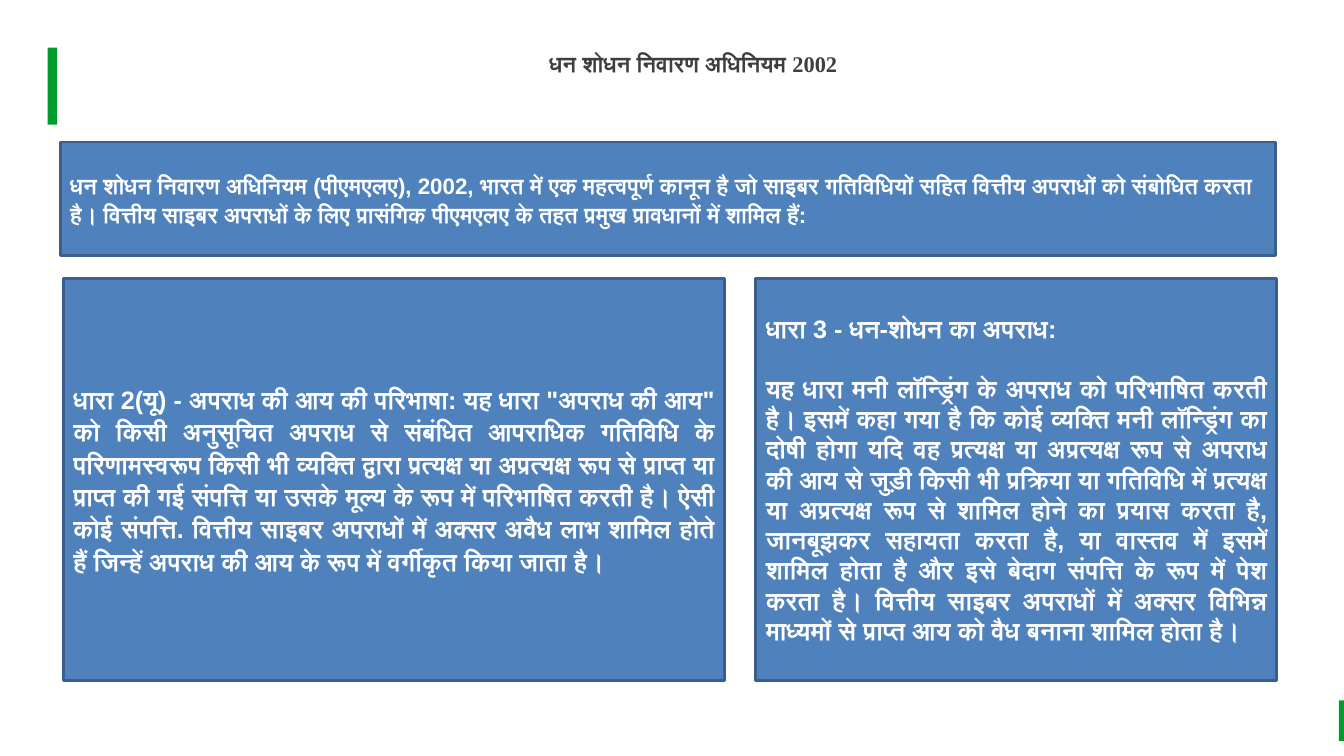
"""Build the slide on the money laundering prevention act of 2002."""
from dataclasses import dataclass

from pptx import Presentation
from pptx.dml.color import RGBColor
from pptx.enum.shapes import MSO_SHAPE
from pptx.enum.text import MSO_ANCHOR, MSO_AUTO_SIZE, PP_ALIGN
from pptx.shapes.autoshape import Shape
from pptx.slide import Slide
from pptx.text.text import _Paragraph
from pptx.util import Cm, Pt

COLOURS = {
    "accent": "029B2D",
    "panel": "4F81BD",
    "border": "3A5F8C",
    "heading": "3E3E3E",
    "panel_text": "FFFFFF",
}


@dataclass(frozen=True)
class Area:
    """A rectangle on the slide, in centimetres."""

    left: float
    top: float
    width: float
    height: float


@dataclass(frozen=True)
class Passage:
    """One paragraph of a panel."""

    wording: str
    align: PP_ALIGN = PP_ALIGN.JUSTIFY
    spacing: float = 1.0
    after: float = 0


@dataclass(frozen=True)
class Panel:
    """A filled box with its passages."""

    area: Area
    size: int
    passages: tuple[Passage, ...]


HEADING = "धन शोधन निवारण अधिनियम 2002"
HEADING_AREA = Area(1.52, 1.27, 31.9, 0.69)
ACCENTS = (Area(33.74, 17.65, 0.13, 1.02), Area(1.2, 1.2, 0.24, 1.94))
PANELS = (
    Panel(Area(1.52, 3.58, 30.63, 2.87), 16, (
        Passage(
            "धन शोधन निवारण अधिनियम (पीएमएलए), 2002, भारत में एक महत्वपूर्ण कानून है "
            "जो साइबर गतिविधियों सहित वित्तीय अपराधों को संबोधित करता है। वित्तीय साइबर "
            "अपराधों के लिए प्रासंगिक पीएमएलए के तहत प्रमुख प्रावधानों में शामिल हैं:",
            PP_ALIGN.LEFT, 1.07, 8),
    )),
    Panel(Area(1.6, 7.01, 16.66, 10.13), 18, (
        Passage(
            'धारा 2(यू) - अपराध की आय की परिभाषा: यह धारा "अपराध की आय" को किसी '
            "अनुसूचित अपराध से संबंधित आपराधिक गतिविधि के परिणामस्वरूप किसी भी व्यक्ति "
            "द्वारा प्रत्यक्ष या अप्रत्यक्ष रूप से प्राप्त या प्राप्त की गई संपत्ति या उसके मूल्य "
            "के रूप में परिभाषित करती है। ऐसी कोई संपत्ति. वित्तीय साइबर अपराधों में अक्सर "
            "अवैध लाभ शामिल होते हैं जिन्हें अपराध की आय के रूप में वर्गीकृत किया जाता है।",
            spacing=1.07, after=8),
    )),
    Panel(Area(19.05, 7.01, 13.13, 10.13), 18, (
        Passage("धारा 3 - धन-शोधन का अपराध:", PP_ALIGN.LEFT, after=21.6),
        Passage(
            "यह धारा मनी लॉन्ड्रिंग के अपराध को परिभाषित करती है। इसमें कहा गया है कि "
            "कोई व्यक्ति मनी लॉन्ड्रिंग का दोषी होगा यदि वह प्रत्यक्ष या अप्रत्यक्ष रूप से "
            "अपराध की आय से जुड़ी किसी भी प्रक्रिया या गतिविधि में प्रत्यक्ष या अप्रत्यक्ष "
            "रूप से शामिल होने का प्रयास करता है, जानबूझकर सहायता करता है, या वास्तव में "
            "इसमें शामिल होता है और इसे बेदाग संपत्ति के रूप में पेश करता है। वित्तीय साइबर "
            "अपराधों में अक्सर विभिन्न माध्यमों से प्राप्त आय को वैध बनाना शामिल होता है।"),
    )),
)


def colour(role: str) -> RGBColor:
    """Return the colour of a role."""
    return RGBColor.from_string(COLOURS[role])


def add_bold_run(paragraph: _Paragraph, wording: str, font: str, size: int, role: str) -> None:
    """Add one bold run to a paragraph."""
    run = paragraph.add_run()
    run.text = wording
    run.font.name = font
    run.font.size = Pt(size)
    run.font.bold = True
    run.font.color.rgb = colour(role)


def add_block(slide: Slide, area: Area, role: str) -> Shape:
    """Draw a plain filled rectangle without an outline."""
    block = slide.shapes.add_shape(
        MSO_SHAPE.RECTANGLE, Cm(area.left), Cm(area.top), Cm(area.width), Cm(area.height))
    block.shadow.inherit = False
    block.fill.solid()
    block.fill.fore_color.rgb = colour(role)
    block.line.fill.background()
    return block


def add_heading(slide: Slide) -> None:
    """Place and fill the title."""
    heading = slide.shapes.title
    heading.left, heading.top = Cm(HEADING_AREA.left), Cm(HEADING_AREA.top)
    heading.width, heading.height = Cm(HEADING_AREA.width), Cm(HEADING_AREA.height)
    frame = heading.text_frame
    frame.margin_left = frame.margin_right = frame.margin_top = frame.margin_bottom = 0
    frame.vertical_anchor = MSO_ANCHOR.TOP
    frame.auto_size = MSO_AUTO_SIZE.SHAPE_TO_FIT_TEXT
    frame.paragraphs[0].alignment = PP_ALIGN.CENTER
    add_bold_run(frame.paragraphs[0], HEADING, "Times New Roman", 16, "heading")


def add_panel(slide: Slide, panel: Panel) -> None:
    """Draw a panel with its passages."""
    block = add_block(slide, panel.area, "panel")
    block.line.color.rgb = colour("border")
    block.line.width = Pt(2)
    frame = block.text_frame
    frame.word_wrap = True
    frame.vertical_anchor = MSO_ANCHOR.MIDDLE
    for index, passage in enumerate(panel.passages):
        paragraph = frame.add_paragraph() if index else frame.paragraphs[0]
        paragraph.alignment = passage.align
        paragraph.line_spacing = passage.spacing
        paragraph.space_after = Pt(passage.after)
        add_bold_run(paragraph, passage.wording, "Arial", panel.size, "panel_text")


def main() -> None:
    """Build and save the presentation."""
    presentation = Presentation()
    presentation.slide_width, presentation.slide_height = Cm(33.87), Cm(19.05)
    slide = presentation.slides.add_slide(presentation.slide_layouts.get_by_name("Title Only"))
    for accent in ACCENTS:
        add_block(slide, accent, "accent")
    add_heading(slide)
    for panel in PANELS:
        add_panel(slide, panel)
    presentation.save("out.pptx")


if __name__ == "__main__":
    main()
